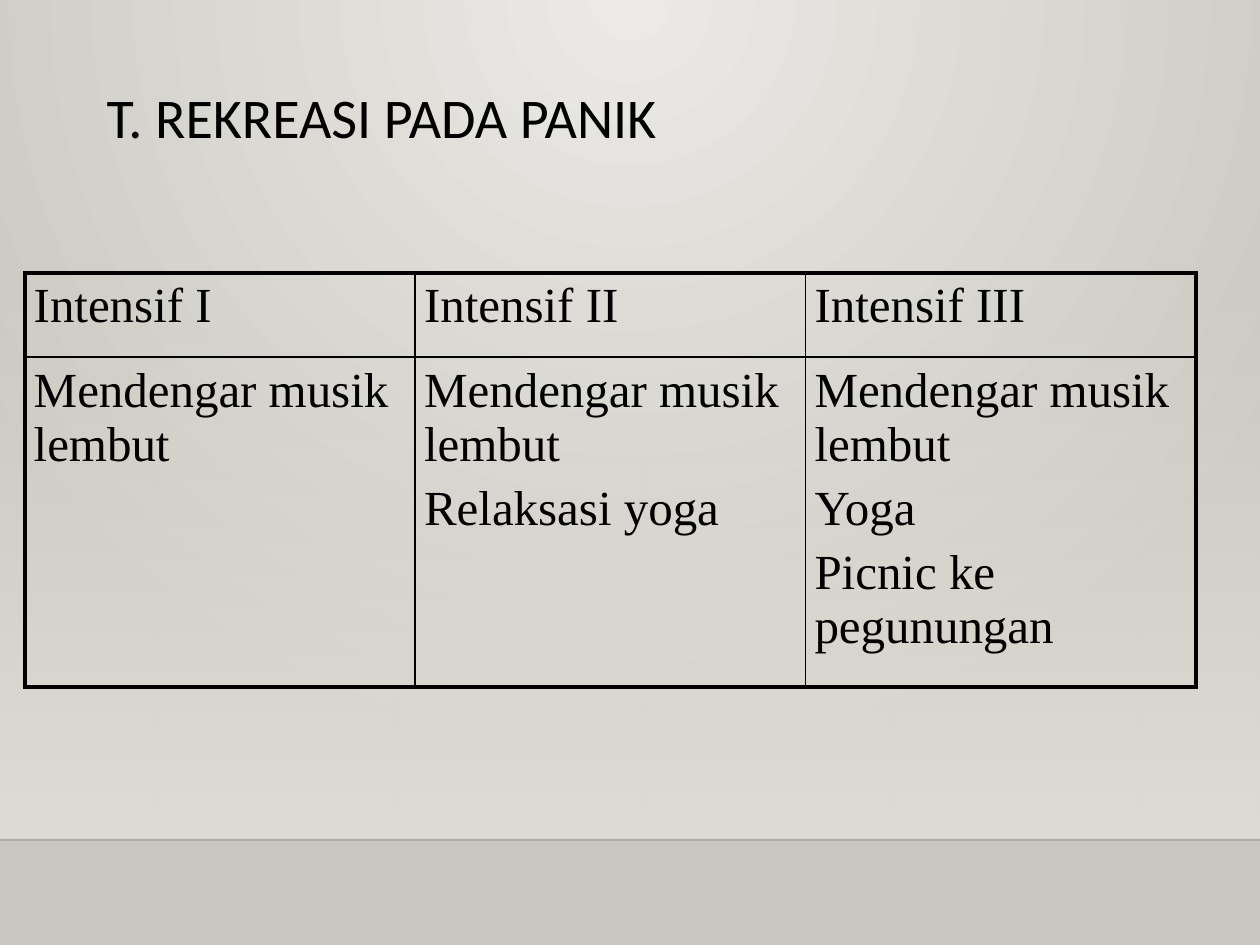
from lxml.etree import SubElement
from pptx import Presentation
from pptx.dml.color import RGBColor
from pptx.enum.shapes import MSO_CONNECTOR as Connector, MSO_SHAPE as Shape
from pptx.enum.text import MSO_ANCHOR as Anchor
from pptx.oxml.ns import qn
from pptx.util import Cm, Pt

BLACK = RGBColor(0x00, 0x00, 0x00)
RULE = RGBColor(0x00, 0x00, 0x01)
GLOW = RGBColor(0xEC, 0xEA, 0xE7)
EDGE = RGBColor(0xCA, 0xC7, 0xC1)
HAZE = RGBColor(0xDF, 0xDB, 0xD5)

WIDTH, HEIGHT = Cm(25.4), Cm(19.05)
HORIZON = Cm(16.93)
THICK, THIN = Pt(2.25), Pt(1)

LEVELS = [
    ("Intensif I", ["Mendengar musik lembut"]),
    ("Intensif II", ["Mendengar musik lembut", "Relaksasi yoga"]),
    ("Intensif III", ["Mendengar musik lembut", "Yoga", "Picnic ke pegunungan"]),
]


def set_gradient(fill, start, end):
    fill.gradient()
    for stop, color in zip(fill.gradient_stops, (start, end)):
        stop.color.rgb = color


def set_alpha(color_element, percent):
    SubElement(color_element, qn("a:alpha"), val=str(percent * 1000))


def style_font(paragraph, name, size):
    paragraph.font.name = name
    paragraph.font.size = Pt(size)
    paragraph.font.color.rgb = BLACK


def add_background(slide):
    """Radial glow that spreads from the middle of the top edge."""
    set_gradient(slide.background.fill, GLOW, EDGE)
    linear = slide._element.xpath("./p:cSld/p:bg//a:lin")[0]
    gradient = linear.getparent()
    gradient.remove(linear)
    circle = SubElement(gradient, qn("a:path"), path="circle")
    SubElement(circle, qn("a:fillToRect"), l="43000", t="0", r="43000", b="100000")


def add_haze(slide):
    """Band that fades in from clear down to the horizon."""
    top = Cm(5.6)
    haze = slide.shapes.add_shape(Shape.RECTANGLE, 0, top, WIDTH, HORIZON - top)
    haze.shadow.inherit = False
    haze.line.fill.background()
    set_gradient(haze.fill, HAZE, HAZE)
    haze.fill.gradient_angle = 270
    set_alpha(haze._element.xpath("./p:spPr//a:gs/a:srgbClr")[0], 0)


def add_horizon(slide):
    horizon = slide.shapes.add_connector(Connector.STRAIGHT, 0, HORIZON, WIDTH, HORIZON)
    horizon.line.width = THIN
    horizon.line.color.rgb = RULE
    set_alpha(horizon._element.xpath("./p:spPr/a:ln//a:srgbClr")[0], 20)
    SubElement(horizon._element.spPr, qn("a:effectLst"))


def add_title(slide, text):
    frame = slide.shapes.add_textbox(Cm(1.9), Cm(1.7), Cm(21.6), Cm(3.18)).text_frame
    frame.word_wrap = True
    frame.vertical_anchor = Anchor.TOP
    title = frame.paragraphs[0]
    title.text = text
    title.line_spacing = 0.9
    style_font(title, "Calibri", 32)


def set_borders(cell, widths):
    for side, width in widths.items():
        border = SubElement(cell._tc.get_or_add_tcPr(), qn(f"a:ln{side}"), w=str(width))
        fill = SubElement(border, qn("a:solidFill"))
        SubElement(fill, qn("a:srgbClr"), val=str(BLACK))


def fill_cell(cell, lines):
    cell.fill.background()
    cell.margin_left = cell.margin_right = Cm(0.18)
    cell.margin_top = cell.margin_bottom = Cm(0.13)
    frame = cell.text_frame
    frame.text = "\n".join(lines)
    for index, paragraph in enumerate(frame.paragraphs):
        if index:
            paragraph.space_before = Pt(5.6)
        style_font(paragraph, "Times New Roman", 28)


def add_levels_table(slide):
    column_width, row_heights = Cm(7.87), (Cm(1.7), Cm(6.65))
    last = len(LEVELS) - 1
    table = slide.shapes.add_table(
        2, len(LEVELS), Cm(0.5), Cm(5.5), column_width * len(LEVELS), sum(row_heights)
    ).table
    table.first_row = table.horz_banding = False
    for row, height in zip(table.rows, row_heights):
        row.height = height
    for col, (level, activities) in enumerate(LEVELS):
        table.columns[col].width = column_width
        for row, lines in enumerate(([level], activities)):
            cell = table.cell(row, col)
            set_borders(cell, {
                "L": THICK if col == 0 else THIN,
                "R": THICK if col == last else THIN,
                "T": THICK if row == 0 else THIN,
                "B": THICK if row == 1 else THIN,
            })
            fill_cell(cell, lines)


def main():
    prs = Presentation()
    prs.slide_width, prs.slide_height = WIDTH, HEIGHT
    slide = prs.slides.add_slide(prs.slide_layouts[6])
    add_background(slide)
    add_haze(slide)
    add_horizon(slide)
    add_title(slide, "T. REKREASI PADA PANIK")
    add_levels_table(slide)
    prs.save("out.pptx")


if __name__ == "__main__":
    main()
